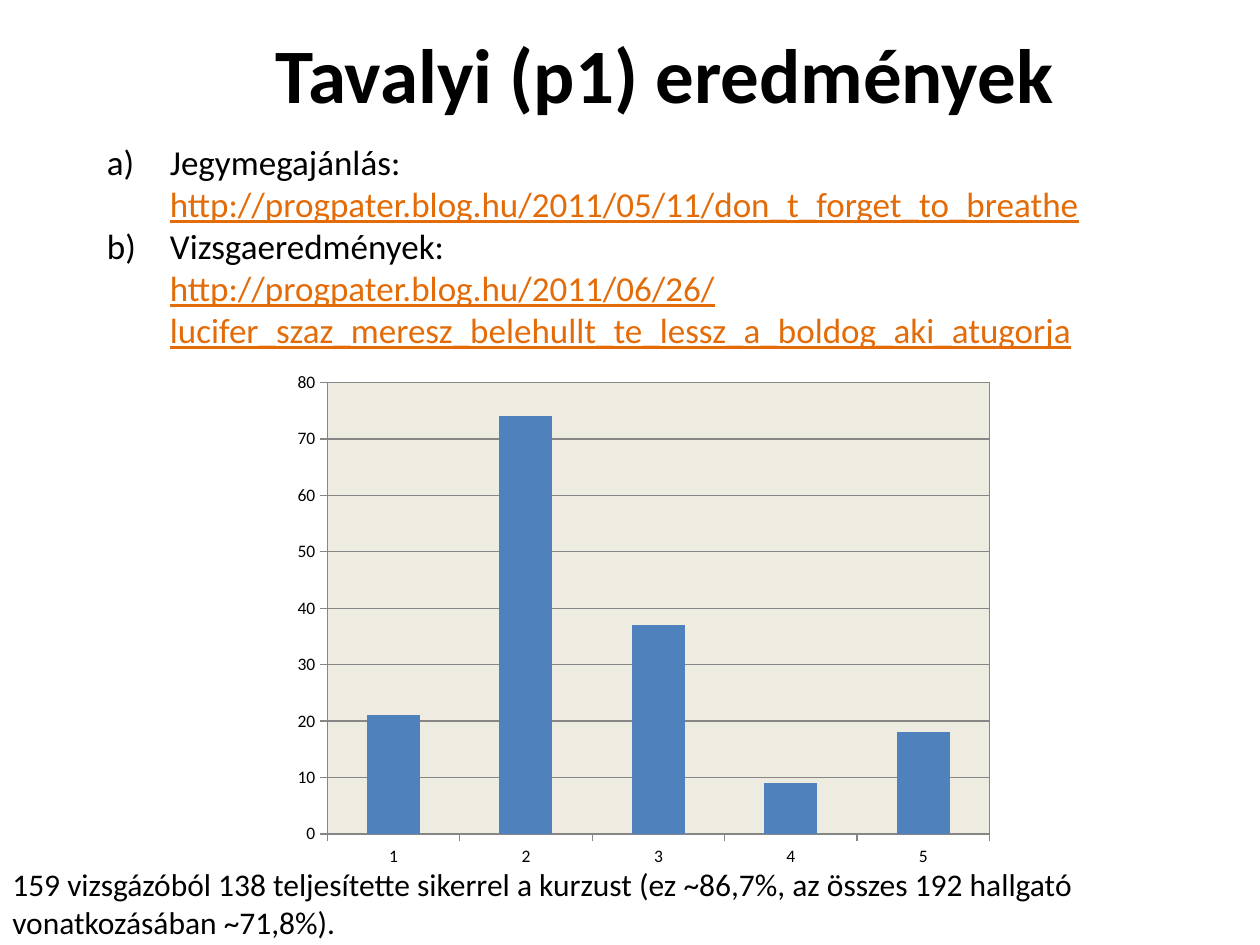
from lxml import etree
from pptx import Presentation
from pptx.chart.data import CategoryChartData
from pptx.dml.color import RGBColor
from pptx.enum.chart import XL_CHART_TYPE as ChartType, XL_TICK_MARK as TickMark
from pptx.enum.text import MSO_AUTO_SIZE as AutoSize
from pptx.oxml import parse_xml
from pptx.oxml.ns import nsdecls, qn
from pptx.util import Pt

FONT = "Calibri"
BLACK, ORANGE, BLUE, GREY, BEIGE = "000000", "E36C09", "4F81BD", "868686", "EEECE1"

RESULTS = [
    ("Jegymegajánlás: ", "http://progpater.blog.hu/2011/05/11/don_t_forget_to_breathe"),
    ("Vizsgaeredmények:\v", "http://progpater.blog.hu/2011/06/26/"
     "lucifer_szaz_meresz_belehullt_te_lessz_a_boldog_aki_atugorja"),
]
GRADES = {"1": 21, "2": 74, "3": 37, "4": 9, "5": 18}
SUMMARY = ("159 vizsgázóból 138 teljesítette sikerrel a kurzust "
           "(ez ~86,7%, az összes 192 hallgató vonatkozásában ~71,8%).")


def color(value):
    return RGBColor.from_string(value)


def style(font, size, bold=False):
    font.name = FONT
    font.size = Pt(size)
    font.bold = bold
    font.color.rgb = color(BLACK)


def add_frame(slide, box, wrap=True):
    frame = slide.shapes.add_textbox(*map(Pt, box)).text_frame
    frame.word_wrap = wrap
    frame.auto_size = AutoSize.SHAPE_TO_FIT_TEXT if wrap else AutoSize.NONE
    return frame


def add_title(slide, box):
    frame = add_frame(slide, box, wrap=False)
    frame.margin_top = Pt(5.5)
    title = frame.paragraphs[0]
    title.text = "Tavalyi (p1) eredmények"
    style(title.font, 44, bold=True)


def add_results(slide, box):
    frame = add_frame(slide, box)
    for index, (label, address) in enumerate(RESULTS):
        entry = frame.add_paragraph() if index else frame.paragraphs[0]
        entry.text = label
        address_run = entry.add_run()
        address_run.text = address
        address_run.font.underline = True
        address_run.font.color.rgb = color(ORANGE)
        properties = entry._p.get_or_add_pPr()
        properties.set("marL", str(Pt(36)))
        properties.set("indent", str(-Pt(36)))
        etree.SubElement(properties, qn("a:buFont"), typeface="+mj-lt")
        etree.SubElement(properties, qn("a:buAutoNum"), type="alphaLcParenR")
        style(entry.font, 20)


def set_plot_area(chart, x, y, w, h):
    area = chart._chartSpace.find(".//" + qn("c:plotArea"))
    for old in area.findall(qn("c:layout")):
        area.remove(old)
    sizes = "".join(f'<c:{key} val="{value}"/>'
                    for key, value in zip("xywh", (x, y, w, h)))
    area.insert(0, parse_xml(
        f'<c:layout {nsdecls("c")}><c:manualLayout><c:layoutTarget val="inner"/>'
        f'<c:xMode val="edge"/><c:yMode val="edge"/>{sizes}'
        '</c:manualLayout></c:layout>'))
    area.append(parse_xml(
        f'<c:spPr {nsdecls("c", "a")}>'
        f'<a:solidFill><a:srgbClr val="{BEIGE}"/></a:solidFill>'
        f'<a:ln w="{Pt(0.75)}"><a:solidFill><a:srgbClr val="{GREY}"/></a:solidFill></a:ln>'
        '</c:spPr>'))


def add_grades(slide, box):
    data = CategoryChartData()
    data.categories = list(GRADES)
    data.add_series("Series 1", list(GRADES.values()))
    chart = slide.shapes.add_chart(
        ChartType.COLUMN_CLUSTERED, *map(Pt, box), data).chart
    chart.has_legend = False
    chart.has_title = False
    style(chart.font, 10)

    bars = chart.plots[0]
    bars.gap_width = 150
    bars.vary_by_categories = False
    bar_fill = bars.series[0].format.fill
    bar_fill.solid()
    bar_fill.fore_color.rgb = color(BLUE)

    counts = chart.value_axis
    counts.minimum_scale, counts.maximum_scale, counts.major_unit = 0, 80, 10
    counts.has_major_gridlines = True
    for axis in (chart.category_axis, counts):
        axis.major_tick_mark = TickMark.OUTSIDE
        axis.minor_tick_mark = TickMark.NONE
    for part in (chart.category_axis, counts, counts.major_gridlines):
        part.format.line.color.rgb = color(GREY)
        part.format.line.width = Pt(0.75)
    set_plot_area(chart, 0.08, 0.05, 0.63, 0.8)


def add_summary(slide, box):
    summary = add_frame(slide, box).paragraphs[0]
    summary.text = SUMMARY
    style(summary.font, 18)


def main():
    deck = Presentation()
    deck.slide_width, deck.slide_height = Pt(720), Pt(540)
    slide = deck.slides.add_slide(deck.slide_layouts[6])
    add_title(slide, (150.5, 9.5, 420, 51))
    add_results(slide, (54, 77, 578, 128))
    add_grades(slide, (139, 202.5, 600.5, 322.5))
    add_summary(slide, (0, 491, 705.5, 51))
    deck.save("out.pptx")


if __name__ == "__main__":
    main()
